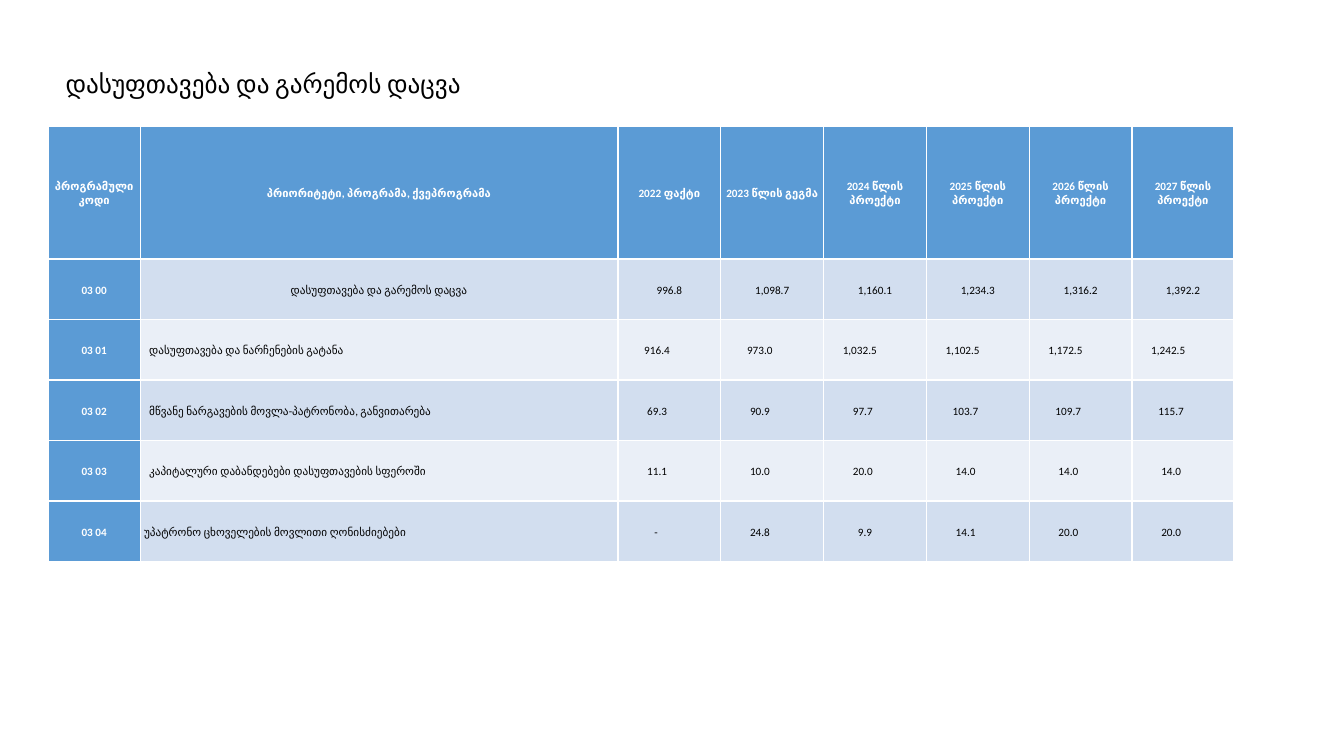
from dataclasses import dataclass

import pptx
import pptx.dml.color
import pptx.enum.text
import pptx.util

PX = 9144  # EMU in one px, 100 px to the inch
FONT = "Calibri"
WHITE, BLACK = "FFFFFF", "000000"
HEADER_FILL = "5B9BD5"
BAND_FILLS = ("D2DEEF", "EAEFF7")

LEFT = pptx.enum.text.PP_ALIGN.LEFT
CENTER = pptx.enum.text.PP_ALIGN.CENTER

COLUMN_WIDTHS = [91, 474] + [102] * 5 + [101]
ROW_HEIGHTS = [132] + [60] * 5
# Left indent of a figure by its number of characters
FIGURE_INDENTS = {7: 18, 5: 25, 4: 28, 3: 33, 1: 35}

HEADERS = (
    "პროგრამული კოდი",
    "პრიორიტეტი, პროგრამა, ქვეპროგრამა",
    "2022 ფაქტი",
    "2023 წლის გეგმა",
    *(f"{year} წლის პროექტი" for year in range(2024, 2028)),
)


@dataclass(frozen=True)
class Programme:
    code: str
    name: str
    figures: tuple[str, ...]
    name_indent: int = 8
    is_total: bool = False


PROGRAMMES = (
    Programme("03 00", "დასუფთავება და გარემოს დაცვა",
              ("996.8", "1,098.7", "1,160.1", "1,234.3", "1,316.2", "1,392.2"),
              is_total=True),
    Programme("03 01", "დასუფთავება და ნარჩენების გატანა",
              ("916.4", "973.0", "1,032.5", "1,102.5", "1,172.5", "1,242.5")),
    Programme("03 02", "მწვანე ნარგავების მოვლა-პატრონობა, განვითარება",
              ("69.3", "90.9", "97.7", "103.7", "109.7", "115.7")),
    Programme("03 03", "კაპიტალური დაბანდებები დასუფთავების სფეროში",
              ("11.1", "10.0", "20.0", "14.0", "14.0", "14.0")),
    Programme("03 04", "უპატრონო ცხოველების მოვლითი ღონისძიებები",
              ("-", "24.8", "9.9", "14.1", "20.0", "20.0"), name_indent=3),
)


def px(length: int) -> pptx.util.Emu:
    return pptx.util.Emu(length * PX)


def rgb(color: str) -> pptx.dml.color.RGBColor:
    return pptx.dml.color.RGBColor.from_string(color)


def write_text(text_frame, text: str, *, size: int = 8, color: str = BLACK,
               bold: bool = False, align=CENTER, indent: int = 0,
               line_spacing: float = 1.07) -> None:
    paragraph = text_frame.paragraphs[0]
    paragraph.alignment = align
    paragraph.line_spacing = line_spacing
    if indent:
        paragraph._p.get_or_add_pPr().set("marL", str(px(indent)))
    run = paragraph.add_run()
    run.text = text
    run.font.name = FONT
    run.font.size = pptx.util.Pt(size)
    run.font.bold = bold
    run.font.color.rgb = rgb(color)


def fill_cell(cell, text: str, fill: str, **text_format) -> None:
    cell.fill.solid()
    cell.fill.fore_color.rgb = rgb(fill)
    cell.vertical_anchor = pptx.enum.text.MSO_ANCHOR.MIDDLE
    cell.margin_left = cell.margin_top = cell.margin_right = px(1)
    cell.margin_bottom = 0
    write_text(cell.text_frame, text, **text_format)


def fill_programme(table, row: int, programme: Programme) -> None:
    fill = BAND_FILLS[(row - 1) % 2]
    fill_cell(table.cell(row, 0), programme.code, HEADER_FILL, color=WHITE, bold=True)
    indents = [programme.name_indent]
    indents += [FIGURE_INDENTS[len(figure)] for figure in programme.figures]
    texts = (programme.name, *programme.figures)
    for column, (text, indent) in enumerate(zip(texts, indents), start=1):
        layout = {} if programme.is_total else {"align": LEFT, "indent": indent}
        fill_cell(table.cell(row, column), text, fill, **layout)


def add_budget_table(slide) -> None:
    table = slide.shapes.add_table(
        len(ROW_HEIGHTS), len(COLUMN_WIDTHS), px(48), px(125),
        px(sum(COLUMN_WIDTHS)), px(sum(ROW_HEIGHTS))).table
    table.first_col = True
    for column, width in zip(table.columns, COLUMN_WIDTHS):
        column.width = px(width)
    for row, height in zip(table.rows, ROW_HEIGHTS):
        row.height = px(height)

    for column, header in enumerate(HEADERS):
        fill_cell(table.cell(0, column), header, HEADER_FILL, color=WHITE, bold=True)
    for row, programme in enumerate(PROGRAMMES, start=1):
        fill_programme(table, row, programme)


def add_title(slide) -> None:
    title = slide.shapes.title
    title.left, title.top, title.width, title.height = map(px, (55, 63, 491, 40))
    text_frame = title.text_frame
    text_frame.word_wrap = True
    text_frame.auto_size = pptx.enum.text.MSO_AUTO_SIZE.SHAPE_TO_FIT_TEXT
    text_frame.vertical_anchor = pptx.enum.text.MSO_ANCHOR.TOP
    write_text(text_frame, "დასუფთავება და გარემოს დაცვა", size=18,
               align=LEFT, line_spacing=1.0)


def main() -> None:
    presentation = pptx.Presentation()
    presentation.slide_width, presentation.slide_height = px(1333), px(750)
    slide = presentation.slides.add_slide(presentation.slide_layouts[5])
    add_title(slide)
    add_budget_table(slide)
    presentation.save("out.pptx")


if __name__ == "__main__":
    main()
